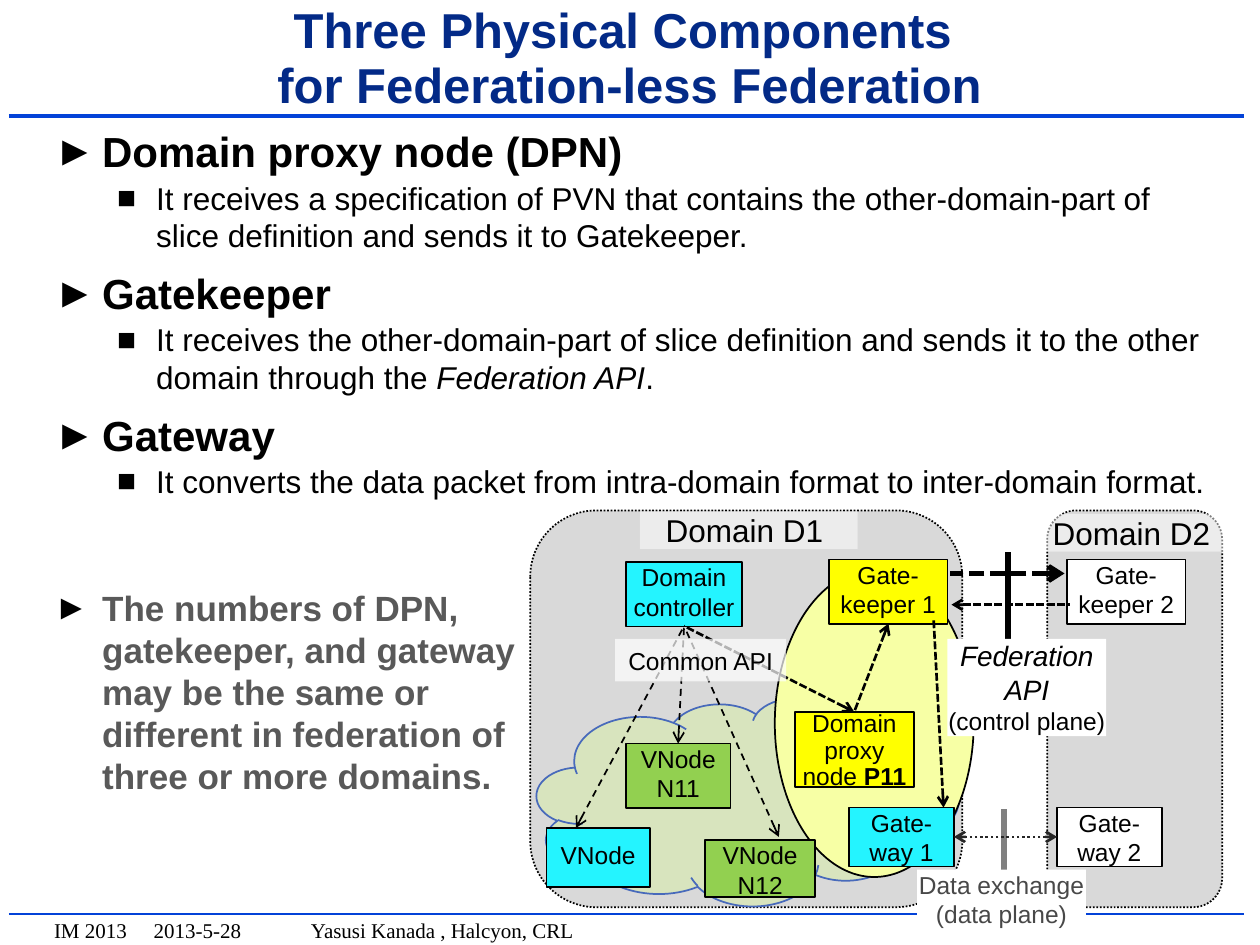
"""Builds a slide on the three physical components of federation-less federation."""
from lxml.etree import SubElement
from pptx import Presentation
from pptx.dml.color import RGBColor
from pptx.enum.dml import MSO_LINE
from pptx.enum.shapes import MSO_CONNECTOR, MSO_SHAPE
from pptx.enum.text import MSO_ANCHOR, PP_ALIGN
from pptx.oxml.ns import qn
from pptx.util import Cm, Pt

HUES = {
    "black": "000000", "white": "FFFFFF", "navy": "032A87", "blue": "0342D8",
    "area": "D9D9D9", "cloud": "D8E4BE", "rim": "486ABB", "pale": "F7FFA5",
    "green": "92D050", "cyan": "24F4FF", "yellow": "FFFF00", "dim": "595959",
    "slate": "484848", "gray": "808080", "dark": "262626",
}
DOT, DASH, SHORT = MSO_LINE.ROUND_DOT, MSO_LINE.DASH, MSO_LINE.SQUARE_DOT
TOP, MID = MSO_ANCHOR.TOP, MSO_ANCHOR.MIDDLE

TITLE = "Three Physical Components \vfor Federation-less Federation"
FOOTER = "IM 2013\t2013-5-28\tYasusi Kanada , Halcyon, CRL"
STOPS = (2.01, 5.18)

LEVELS = {
    "head": dict(size=24, bold=True, left=0.97, hang=0.97, gap=7.7, mark="►", hue="black"),
    "item": dict(size=18, bold=False, left=2.06, hang=0.79, gap=1.3, mark="■", hue="black"),
    "note": dict(size=20, bold=True, left=0.97, hang=0.97, gap=49.6, mark="►", hue="dim"),
}
BODY = [
    ("head", ["Domain proxy node (DPN)"]),
    ("item", ["It receives a specification of PVN that contains the other-domain-part of "
              "slice definition and sends it to Gatekeeper."]),
    ("head", ["Gatekeeper"]),
    ("item", ["It receives the other-domain-part of slice definition and sends it to the other "
              "domain through the ", "Federation API", "."]),
    ("head", ["Gateway"]),
    ("item", ["It converts the data packet from intra-domain format to inter-domain format."]),
    ("note", ["The numbers of DPN,\vgatekeeper, and gateway\vmay be the same or\v"
              "different in federation of\vthree or more domains."]),
]

AREAS = [
    (MSO_SHAPE.ROUNDED_RECTANGLE, (10.69, 10.29, 8.71, 8), "area", "black", DOT),
    (MSO_SHAPE.CLOUD, (10.82, 14.07, 8.51, 4.19), "cloud", "rim", None),
    (MSO_SHAPE.OVAL, (15.62, 11.48, 4.01, 6.2), "pale", "black", None),
    (MSO_SHAPE.ROUNDED_RECTANGLE, (21.11, 10.29, 3.53, 8), "area", "black", DOT),
]
NODES = [
    ("VNode N11", (12.62, 14.99, 2.11, 1.3), "green", TOP),
    ("VNode", (11.02, 16.69, 2.08, 1.19), "cyan", MID),
    ("Domain controller", (12.62, 11.33, 2.34, 1.3), "cyan", MID),
    ("VNode N12", (14.22, 16.94, 2.21, 1.14), "green", TOP),
    ("Gate-way 1", (17.12, 16.28, 2.11, 1.19), "cyan", TOP),
    ("Gate-way 2", (21.31, 16.28, 2.11, 1.19), "white", TOP),
    ("Gate-keeper 1", (16.71, 11.28, 2.39, 1.3), "yellow", MID),
    ("Gate-keeper 2", (21.51, 11.28, 2.39, 1.3), "white", MID),
    ("Domain proxy node ", (16.03, 14.35, 2.39, 1.52), "yellow", TOP),
]
HUB = (13.79, 12.62)
LINES = [
    ((11.61, 16.69), HUB, "black", 1, DASH, "head"),
    ((15.7, 16.87), HUB, "black", 1, DASH, "head"),
    ((13.67, 14.99), HUB, "black", 1, DASH, "head"),
    ((17.22, 14.35), HUB, "black", 1.5, SHORT, "head"),
    ((17.91, 12.57), (17.22, 14.35), "black", 1.5, SHORT, "head"),
    ((19.02, 16.28), (18.82, 12.47), "black", 1.5, SHORT, "head"),
    ((21.46, 11.56), (19.15, 11.56), "black", 3, SHORT, "head"),
    ((20.32, 11.13), (20.32, 12.93), "black", 3, None, ""),
    ((19.18, 12.19), (21.56, 12.19), "black", 1.5, SHORT, "head"),
    ((20.24, 16.31), (20.24, 18.01), "gray", 3, None, ""),
    ((21.31, 16.87), (19.23, 16.87), "dark", 1.5, DOT, "head tail"),
]
LABELS = [
    ((12.4, 12.88, 3.45, 0.86), 70, "black", MID, [("Common API", 14, False)]),
    ((12.9, 10.31, 4.39, 0.76), 50, "black", TOP, [("Domain D1 ", 18, False)]),
    ((20.9, 10.36, 3.99, 0.76), 50, "black", TOP, [("Domain D2 ", 18, False)]),
    ((19.1, 12.88, 3.2, 1.96), 100, "black", TOP,
     [("Federation API", 16, True), ("(control plane)", 14, False)]),
    ((18.49, 17.53, 3.4, 1.19), 100, "slate", TOP,
     [("Data exchange", 14, False), ("(data plane)", 14, False)]),
]


def tint(name):
    return RGBColor.from_string(HUES[name])


def style(run, size, hue="black", bold=False, slant=False, face="Arial"):
    font = run.font
    font.name, font.size, font.bold, font.italic = face, Pt(size), bold, slant
    font.color.rgb = tint(hue)


def setup(shape, pad, anchor=TOP):
    frame = shape.text_frame
    frame.word_wrap, frame.vertical_anchor = True, anchor
    frame.margin_left, frame.margin_top, frame.margin_right, frame.margin_bottom = map(Cm, pad)
    return frame


def write(slide, place, text, anchor=TOP, **look):
    frame = setup(slide.shapes.add_textbox(*map(Cm, place)), (0.25, 0.13, 0.25, 0.13), anchor)
    frame.text = text
    para = frame.paragraphs[0]
    for run in para.runs:
        style(run, **look)
    return para


def block(slide, kind, place, fill, edge=None, dash=None):
    shape = slide.shapes.add_shape(kind, *map(Cm, place))
    shape.shadow.inherit = False
    shape.fill.solid()
    shape.fill.fore_color.rgb = tint(fill)
    if edge:
        shape.line.width = Pt(1)
        shape.line.color.rgb = tint(edge)
        if dash:
            shape.line.dash_style = dash
    else:
        shape.line.fill.background()
    return shape


def link(slide, start, end, hue, width, dash=None, tips=""):
    line = slide.shapes.add_connector(MSO_CONNECTOR.STRAIGHT, *map(Cm, start + end))
    line.line.width = Pt(width)
    line.line.color.rgb = tint(hue)
    if dash:
        line.line.dash_style = dash
    props = line._element.spPr
    for tip in tips.split():
        SubElement(props.find(qn("a:ln")), qn(f"a:{tip}End"), type="arrow")
    SubElement(props, qn("a:effectLst"))


def fill_body(slide):
    frame = setup(slide.shapes.add_textbox(*map(Cm, (0.84, 2.41, 23.7, 14.99))),
                  (0.25, 0.13, 0.25, 0.13))
    for num, (level, texts) in enumerate(BODY):
        look = LEVELS[level]
        para = frame.add_paragraph() if num else frame.paragraphs[0]
        para.text = texts[0]
        for text in texts[1:]:
            para.add_run().text = text
        for run in para.runs:
            style(run, look["size"], look["hue"], look["bold"], run.text == "Federation API")
        para.space_before = Pt(look["gap"])
        props = para._p.get_or_add_pPr()
        props.set("marL", str(Cm(look["left"])))
        props.set("indent", str(-Cm(look["hang"])))
        SubElement(SubElement(props, qn("a:buClr")), qn("a:srgbClr"), val=HUES["black"])
        SubElement(props, qn("a:buFont"), typeface="Arial")
        SubElement(props, qn("a:buChar"), char=look["mark"])


def draw_plan(slide):
    for area in AREAS:
        block(slide, *area)
    for text, place, fill, anchor in NODES:
        frame = setup(block(slide, MSO_SHAPE.RECTANGLE, place, fill, "black"),
                      (0.1, 0, 0.1, 0.1), anchor)
        frame.text = text
        para = frame.paragraphs[0]
        para.alignment = PP_ALIGN.CENTER
        style(para.runs[0], 14)
        if "proxy" in text:
            para.line_spacing = 0.9
            run = para.add_run()
            run.text = "P11"
            style(run, 14, bold=True)
    for line in LINES:
        link(slide, *line)
    for place, solid, hue, anchor, rows in LABELS:
        shape = block(slide, MSO_SHAPE.RECTANGLE, place, "white")
        color = shape._element.spPr.find(qn("a:solidFill"))[0]
        if solid < 100:
            SubElement(color, qn("a:alpha"), val=str(solid * 1000))
        frame = setup(shape, (0, 0, 0, 0), anchor)
        frame.text = "\n".join(row[0] for row in rows)
        for para, (_, size, slant) in zip(frame.paragraphs, rows):
            para.alignment = PP_ALIGN.CENTER
            style(para.runs[0], size, hue, slant=slant)


def main():
    deck = Presentation()
    deck.slide_width, deck.slide_height = Cm(25.4), Cm(19.05)
    slide = deck.slides.add_slide(deck.slide_layouts[6])
    for level, width in ((2.34, 2), (18.42, 1)):
        link(slide, (0.18, level), (25.07, level), "blue", width)
    foot = write(slide, (0.84, 18.36, 23.44, 0.76), FOOTER, size=12, face="Times New Roman")
    tabs = SubElement(foot._p.get_or_add_pPr(), qn("a:tabLst"))
    for stop in STOPS:
        SubElement(tabs, qn("a:tab"), pos=str(Cm(stop)), algn="l")
    title = write(slide, (0.84, 0.46, 23.7, 1.47), TITLE, MID, size=28, hue="navy", bold=True)
    title.alignment, title.line_spacing = PP_ALIGN.CENTER, 0.95
    fill_body(slide)
    draw_plan(slide)
    deck.save("out.pptx")


if __name__ == "__main__":
    main()
